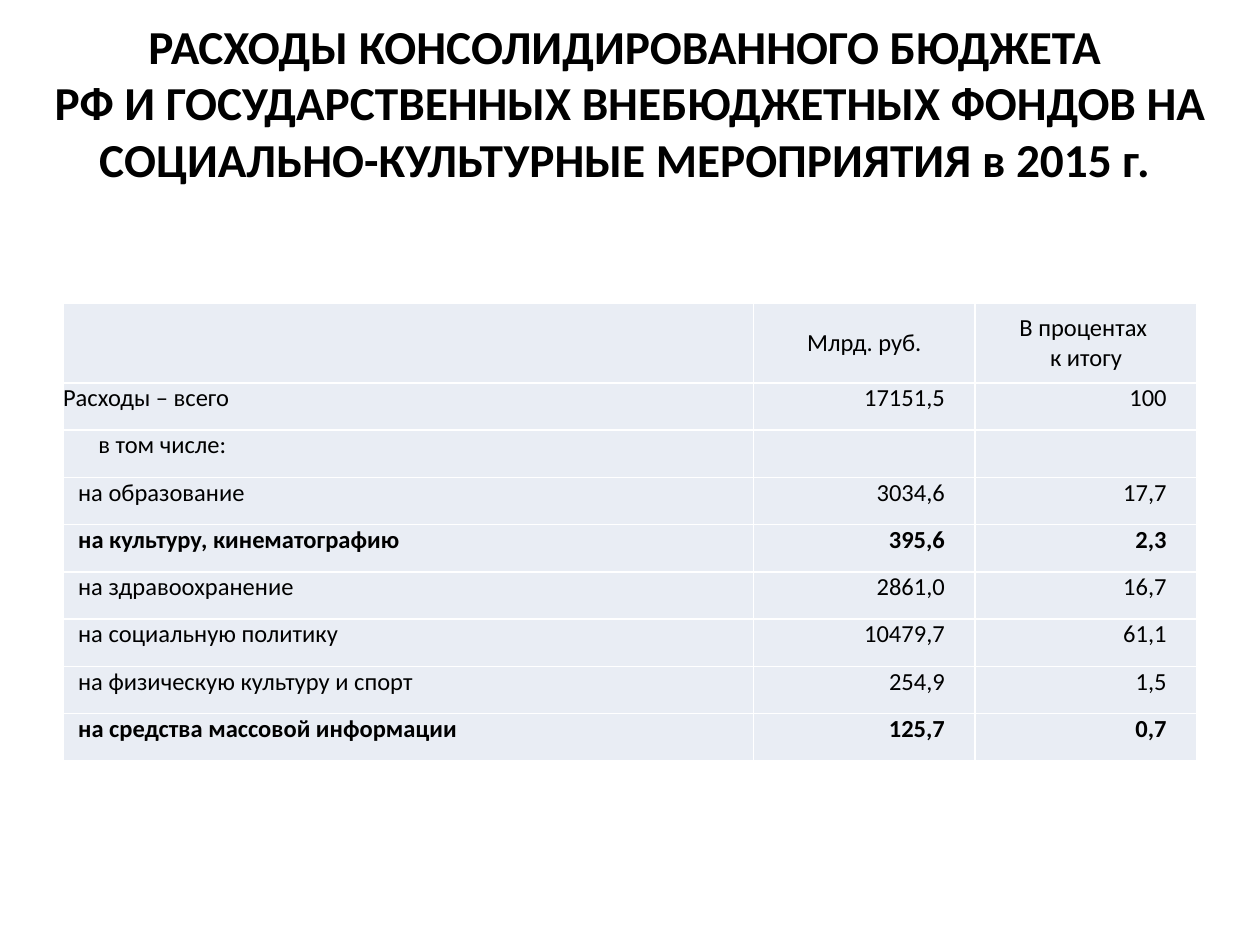
"""Build a slide with a table of 2015 social and cultural budget spending."""
from lxml import etree
from pptx import Presentation
from pptx import util as u
from pptx.dml.color import RGBColor
from pptx.enum import text
from pptx.oxml import ns

BLACK = RGBColor(0, 0, 0)
WHITE = RGBColor(255, 255, 255)
PALE_BLUE = RGBColor(0xE9, 0xED, 0xF4)

TITLE = (
    "РАСХОДЫ КОНСОЛИДИРОВАННОГО БЮДЖЕТА \v"
    "РФ И ГОСУДАРСТВЕННЫХ ВНЕБЮДЖЕТНЫХ ФОНДОВ НА "
    "СОЦИАЛЬНО-КУЛЬТУРНЫЕ МЕРОПРИЯТИЯ в 2015 г. "
)
HEADER = ("", "Млрд. руб.", "В процентах \vк итогу")
EXPENSES = [
    ("Расходы – всего", "17151,5", "100"),
    ("в том числе:", "", ""),
    ("на образование", "3034,6", "17,7"),
    ("на культуру, кинематографию", "395,6", "2,3"),
    ("на здравоохранение", "2861,0", "16,7"),
    ("на социальную политику", "10479,7", "61,1"),
    ("на физическую культуру и спорт", "254,9", "1,5"),
    ("на средства массовой информации", "125,7", "0,7"),
]
BOLD_ROWS = (4, 8)
LABEL_INDENTS = {1: 0, 2: 0.28}
ITEM_INDENT = 0.12
NUMBER_INDENT = 0.24
COLUMN_WIDTHS = (5.48, 1.76, 1.76)
HEADER_HEIGHT, ROW_HEIGHT = 0.63, 0.375

HEADER_FORMAT = {
    "alignment": text.PP_ALIGN.CENTER,
    "space_before": u.Pt(2),
    "space_after": u.Pt(2),
}
BODY_FORMAT = {"line_spacing": u.Pt(7.5), "space_before": u.Pt(3)}
CELL_FORMAT = {
    "margin_left": 0,
    "margin_top": 0,
    "margin_right": 0,
    "margin_bottom": 0,
    "vertical_anchor": text.MSO_ANCHOR.MIDDLE,
}


def apply_format(target, values):
    for name, value in values.items():
        setattr(target, name, value)


def write(paragraph, content, size, bold):
    paragraph.text = content
    for run in paragraph.runs:
        apply_format(run.font, {"name": "Calibri", "size": u.Pt(size), "bold": bold})
        run.font.color.rgb = BLACK


def add_borders(cell):
    properties = cell._tc.get_or_add_tcPr()
    for position, side in enumerate(("lnL", "lnR", "lnT", "lnB")):
        line = etree.Element(ns.qn(f"a:{side}"), w=str(u.Pt(1)))
        fill = etree.SubElement(line, ns.qn("a:solidFill"))
        etree.SubElement(fill, ns.qn("a:srgbClr"), val=str(WHITE))
        properties.insert(position, line)


def fill_cell(cell, row, column, content):
    apply_format(cell, CELL_FORMAT)
    cell.fill.solid()
    cell.fill.fore_color.rgb = PALE_BLUE
    add_borders(cell)
    paragraph = cell.text_frame.paragraphs[0]
    write(paragraph, content, 14, row in BOLD_ROWS)
    apply_format(paragraph, BODY_FORMAT if row else HEADER_FORMAT)
    if row == 0:
        return
    properties = paragraph._p.get_or_add_pPr()
    if column == 0:
        indent = LABEL_INDENTS.get(row, ITEM_INDENT)
        properties.set("marL", str(u.Inches(indent)))
    else:
        paragraph.alignment = text.PP_ALIGN.RIGHT
        properties.set("marR", str(u.Inches(NUMBER_INDENT)))


def add_title(slide):
    shape = slide.shapes.add_textbox(0, 0, u.Inches(10), u.Inches(1.62))
    frame = shape.text_frame
    apply_format(frame, {"word_wrap": True, "vertical_anchor": text.MSO_ANCHOR.MIDDLE})
    paragraph = frame.paragraphs[0]
    write(paragraph, TITLE, 27, True)
    paragraph.alignment = text.PP_ALIGN.CENTER


def add_expense_table(slide):
    rows = [HEADER, *EXPENSES]
    heights = [HEADER_HEIGHT] + [ROW_HEIGHT] * len(EXPENSES)
    table = slide.shapes.add_table(
        len(rows), len(HEADER), u.Inches(0.5), u.Inches(2.41),
        u.Inches(sum(COLUMN_WIDTHS)), u.Inches(sum(heights)),
    ).table
    apply_format(table, {"first_row": False, "horz_banding": False})
    for column, width in zip(table.columns, COLUMN_WIDTHS):
        column.width = u.Inches(width)
    for row, (contents, height) in enumerate(zip(rows, heights)):
        table.rows[row].height = u.Inches(height)
        for column, content in enumerate(contents):
            fill_cell(table.cell(row, column), row, column, content)


def main():
    presentation = Presentation()
    apply_format(
        presentation, {"slide_width": u.Inches(10), "slide_height": u.Inches(7.5)}
    )
    slide = presentation.slides.add_slide(presentation.slide_layouts[6])
    add_title(slide)
    add_expense_table(slide)
    presentation.save("out.pptx")


if __name__ == "__main__":
    main()
